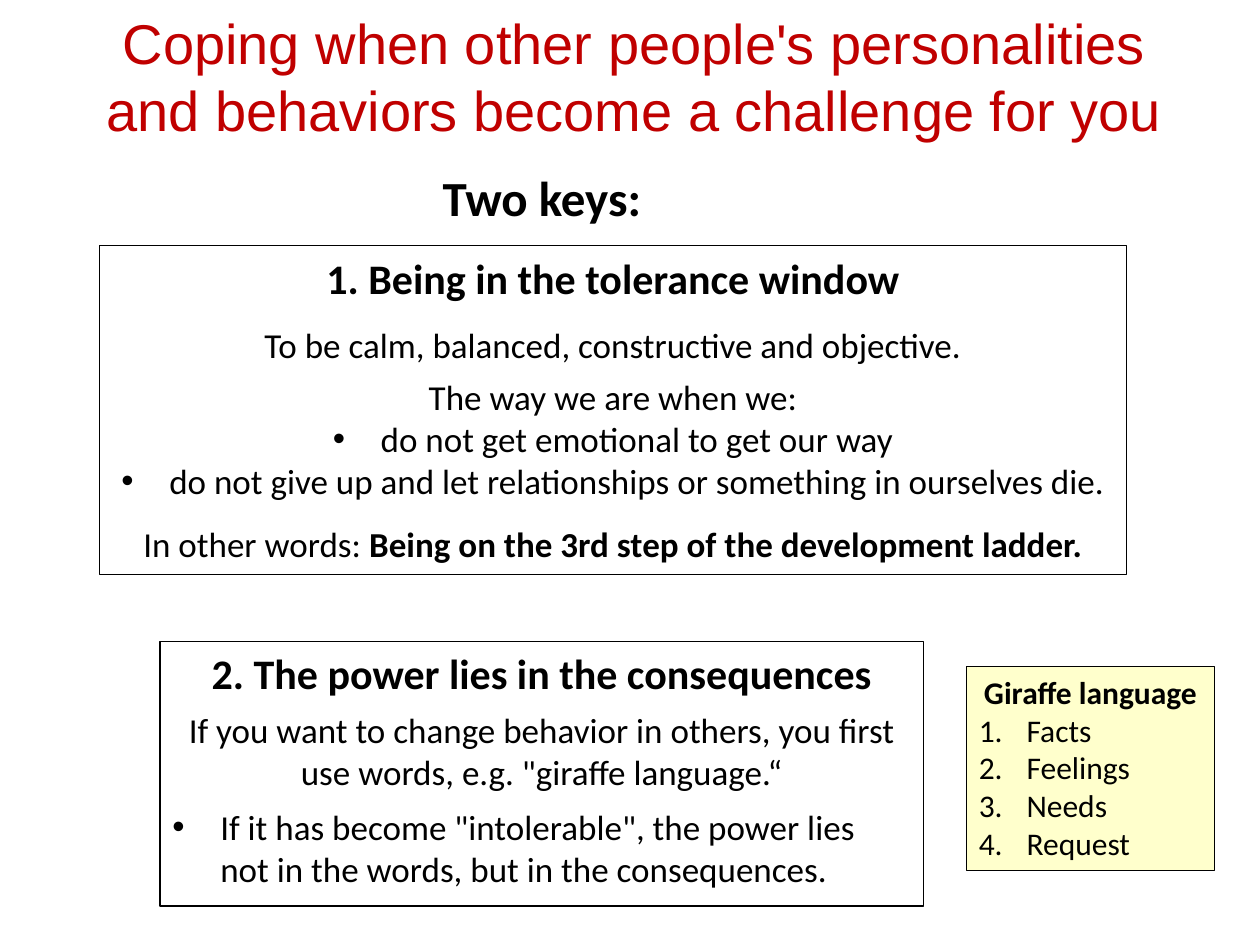
from dataclasses import dataclass

from lxml.etree import SubElement
from pptx import Presentation
from pptx.dml.color import RGBColor
from pptx.enum.shapes import MSO_SHAPE as Preset
from pptx.enum.text import MSO_ANCHOR as Anchor, MSO_AUTO_SIZE as AutoSize, PP_ALIGN as Align
from pptx.oxml.ns import qn
from pptx.util import Inches, Pt


@dataclass(frozen=True)
class Theme:
    title_color: RGBColor = RGBColor(0xC0, 0x00, 0x00)
    ink: RGBColor = RGBColor(0x00, 0x00, 0x00)
    note_fill: RGBColor = RGBColor(0xFF, 0xFF, 0xCC)
    title_font: str = "Arial"
    body_font: str = "Calibri"
    title_size: int = 32
    lead_size: int = 28
    heading_size: int = 24
    text_size: int = 20
    note_size: int = 18
    outline: float = 0.75


THEME = Theme()


@dataclass(frozen=True)
class Line:
    text: str
    size: int = THEME.text_size
    bold: bool = False
    before: int = 0
    align: Align = Align.CENTER
    bullet: str = ""
    bold_tail: str = ""


@dataclass(frozen=True)
class Box:
    left: float
    top: float
    width: float
    height: float
    lines: tuple[Line, ...]
    outlined: bool = True
    fill: RGBColor | None = None

    def lengths(self) -> tuple[int, ...]:
        return tuple(Inches(value) for value in (self.left, self.top, self.width, self.height))


KEY_ONE = Box(0.79, 1.95, 8.15, 2.61, (
    Line("1. Being in the tolerance window", THEME.heading_size, True),
    Line("To be calm, balanced, constructive and objective.", before=12),
    Line("The way we are when we:", before=6),
    Line("do not get emotional to get our way", bullet="•"),
    Line("do not give up and let relationships or something in ourselves die.", bullet="•"),
    Line("In other words: ", before=12,
         bold_tail="Being on the 3rd step of the development ladder."),
))
KEY_TWO = Box(1.27, 5.09, 6.06, 2.1, (
    Line("2. The power lies in the consequences", THEME.heading_size, True, 6),
    Line('If you want to change behavior in others, you first use words, e.g. "giraffe language.“',
         before=6),
))
LEAD = Box(3.17, 1.28, 2.26, 0.57, (Line("Two keys:", THEME.lead_size, True),), outlined=False)
GIRAFFE = Box(7.67, 5.29, 1.97, 1.62, (
    Line("Giraffe language", THEME.note_size, True),
    *(Line(step, THEME.note_size, align=Align.LEFT, bullet="1.")
      for step in ("Facts", "Feelings", "Needs", "Request")),
), fill=THEME.note_fill)
CONSEQUENCE = Box(1.27, 6.34, 5.65, 0.77, (
    Line('If it has become "intolerable", the power lies not in the words, '
         'but in the consequences.', before=6, align=Align.LEFT, bullet="•"),
), outlined=False)


def add_text(paragraph, text: str, *, size: int, bold: bool = False,
             font: str = THEME.body_font, color: RGBColor = THEME.ink) -> None:
    run = paragraph.add_run()
    run.text = text
    run.font.name = font
    run.font.size = Pt(size)
    run.font.bold = bold
    run.font.color.rgb = color


def set_bullet(paragraph, bullet: str) -> None:
    properties = paragraph._p.get_or_add_pPr()
    indent = Inches(0.38) if bullet else 0
    properties.set("marL", str(indent))
    properties.set("indent", str(-indent))
    if not bullet:
        SubElement(properties, qn("a:buNone"))
    elif bullet == "1.":
        SubElement(properties, qn("a:buFont"), typeface="+mj-lt")
        SubElement(properties, qn("a:buAutoNum"), type="arabicPeriod")
    else:
        SubElement(properties, qn("a:buFont"), typeface="Arial")
        SubElement(properties, qn("a:buChar"), char=bullet)


def place(shape, box: Box) -> None:
    shape.left, shape.top, shape.width, shape.height = box.lengths()


def write_lines(shape, lines: tuple[Line, ...]) -> None:
    frame = shape.text_frame
    frame.word_wrap = True
    frame.auto_size = AutoSize.NONE
    frame.vertical_anchor = Anchor.TOP
    for index, line in enumerate(lines):
        paragraph = frame.add_paragraph() if index else frame.paragraphs[0]
        paragraph.alignment = line.align
        paragraph.space_before = Pt(line.before)
        set_bullet(paragraph, line.bullet)
        add_text(paragraph, line.text, size=line.size, bold=line.bold)
        if line.bold_tail:
            add_text(paragraph, line.bold_tail, size=line.size, bold=True)


def set_outline(shape) -> None:
    shape.line.color.rgb = THEME.ink
    shape.line.width = Pt(THEME.outline)


def add_box(slide, box: Box) -> None:
    if box.outlined:
        shape = slide.shapes.add_shape(Preset.RECTANGLE, *box.lengths())
        shape.shadow.inherit = False
        set_outline(shape)
        if box.fill is None:
            shape.fill.background()
        else:
            shape.fill.solid()
            shape.fill.fore_color.rgb = box.fill
    else:
        shape = slide.shapes.add_textbox(*box.lengths())
    write_lines(shape, box.lines)


def fill_title(title) -> None:
    place(title, Box(0.54, 0.01, 8.99, 1.18, ()))
    frame = title.text_frame
    frame.word_wrap = True
    frame.auto_size = AutoSize.NONE
    frame.vertical_anchor = Anchor.MIDDLE
    paragraph = frame.paragraphs[0]
    paragraph.alignment = Align.CENTER
    add_text(paragraph,
             "Coping when other people's personalities and behaviors become a challenge for you",
             size=THEME.title_size, font=THEME.title_font, color=THEME.title_color)


def main() -> None:
    presentation = Presentation()
    presentation.slide_width = Inches(10)
    presentation.slide_height = Inches(7.5)
    slide = presentation.slides.add_slide(presentation.slide_layouts[1])
    fill_title(slide.shapes.title)
    body = slide.placeholders[1]
    place(body, KEY_ONE)
    set_outline(body)
    write_lines(body, KEY_ONE.lines)
    for box in (KEY_TWO, LEAD, GIRAFFE, CONSEQUENCE):
        add_box(slide, box)
    presentation.save("out.pptx")


if __name__ == "__main__":
    main()
